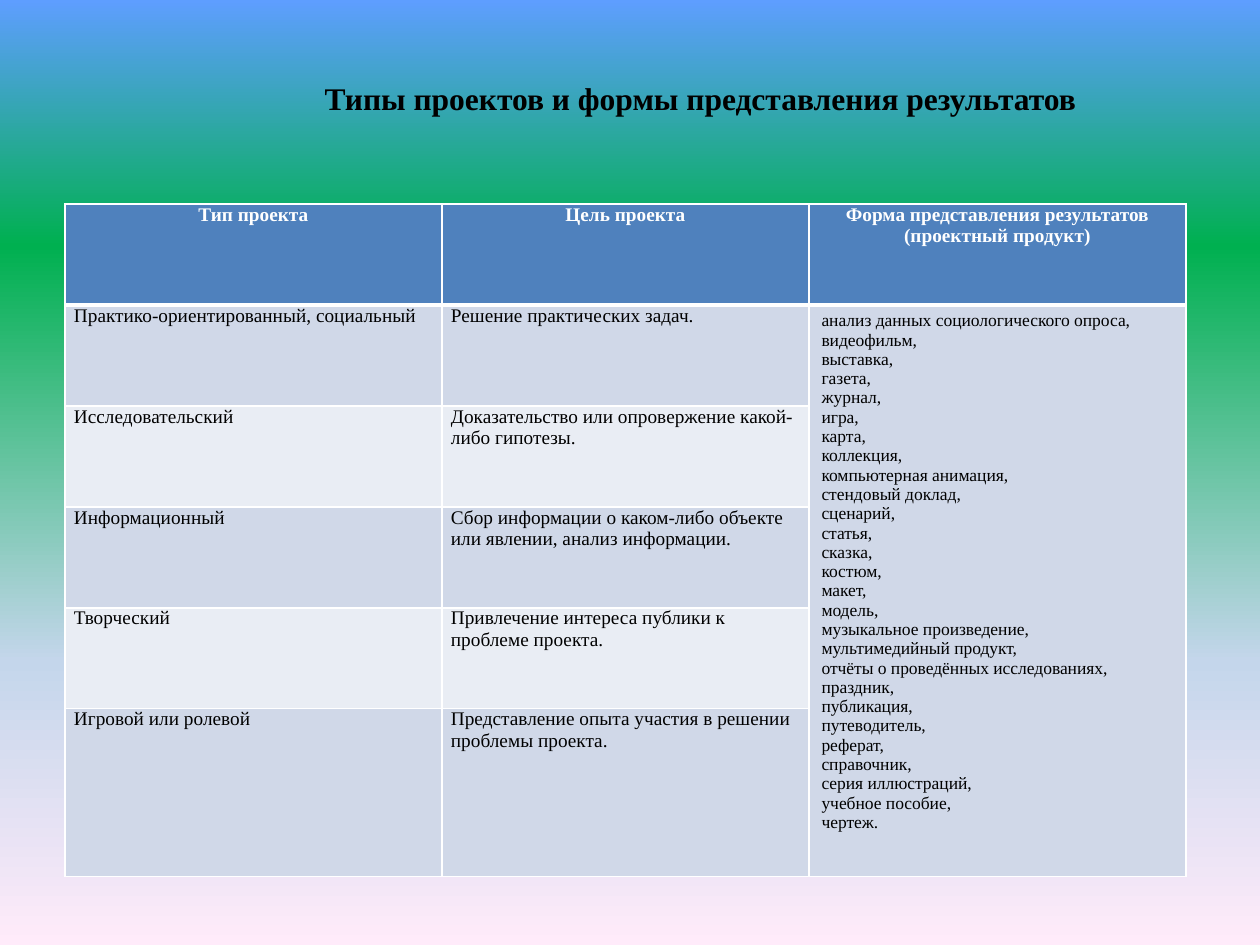
"""Build a slide with a table of project types, goals and result formats."""
from lxml import etree
from pptx import Presentation
from pptx import util as u
from pptx.dml.color import RGBColor
from pptx.enum import text
from pptx.oxml.ns import qn

PX = 914400 // 126
FONT = "Times New Roman"
COLORS = {"black": "000000", "white": "FFFFFF", "header": "4F81BD",
          "odd": "D0D8E8", "even": "E9EDF4"}
BACKGROUND = [(0, "5E9EFF"), (26, "00B050"), (70, "C4D6EB"), (100, "FFEBFA")]
HEADINGS = ["Тип проекта", "Цель проекта",
            "Форма представления результатов (проектный продукт)"]
PROJECTS = [
    ("Практико-ориентированный, социальный", "Решение практических задач."),
    ("Исследовательский", "Доказательство или опровержение какой-либо гипотезы."),
    ("Информационный",
     "Сбор информации о каком-либо объекте или явлении, анализ информации."),
    ("Творческий", "Привлечение интереса публики к проблеме проекта."),
    ("Игровой или ролевой", "Представление опыта участия в решении проблемы проекта."),
]
PRODUCTS = [
    "анализ данных социологического опроса,", "видеофильм,", "выставка,", "газета,",
    "журнал,", "игра,", "карта,", "коллекция,", "компьютерная анимация,",
    "стендовый доклад,", "сценарий,", "статья,", "сказка,", "костюм,", "макет,",
    "модель,", "музыкальное произведение,", "мультимедийный продукт,",
    "отчёты о проведённых исследованиях,", "праздник,", "публикация,",
    "путеводитель,", "реферат,", "справочник,", "серия иллюстраций,",
    "учебное пособие,", "чертеж.",
]
COLUMNS = [377, 367, 377]
ROWS = [101] * 5 + [168]


def style_text(frame, size, color, bold, align):
    for para in frame.paragraphs:
        para.alignment = align
        for span in para.runs:
            span.font.name = FONT
            span.font.size = u.Pt(size)
            span.font.bold = bold
            span.font.color.rgb = RGBColor.from_string(COLORS[color])


def add_border(cell, index, side, points):
    line = etree.Element(qn(f"a:{side}"), w=str(u.Pt(points)))
    fill = etree.SubElement(line, qn("a:solidFill"))
    etree.SubElement(fill, qn("a:srgbClr"), val=COLORS["white"])
    cell._tc.get_or_add_tcPr().insert(index, line)


deck = Presentation()
deck.slide_width, deck.slide_height = u.Inches(10), u.Inches(7.5)
page = deck.slides.add_slide(deck.slide_layouts[5])

backdrop = page.background.fill
backdrop.gradient()
backdrop.gradient_angle = 270
stops = page.background._cSld.find(".//" + qn("a:gsLst"))
for stop in list(stops):
    stops.remove(stop)
for percent, color in BACKGROUND:
    stop = etree.SubElement(stops, qn("a:gs"), pos=str(percent * 1000))
    etree.SubElement(stop, qn("a:srgbClr"), val=color)

title = page.shapes.title
title.left, title.top, title.width, title.height = (n * PX for n in (95, 37, 1071, 80))
frame = title.text_frame
frame.text = "Типы проектов и формы представления результатов"
frame.auto_size = text.MSO_AUTO_SIZE.NONE
frame.vertical_anchor = text.MSO_ANCHOR.TOP
frame.margin_left, frame.margin_right = 140 * PX, 0
frame.margin_top, frame.margin_bottom = 42 * PX, 0
style_text(frame, 18, "black", True, text.PP_ALIGN.CENTER)

holder = page.shapes.add_table(len(ROWS), len(COLUMNS), 65 * PX, 204 * PX,
                               sum(COLUMNS) * PX, sum(ROWS) * PX)
table = holder.table
for column, width in zip(table.columns, COLUMNS):
    column.width = width * PX
for row, height in zip(table.rows, ROWS):
    row.height = height * PX

table.cell(1, 2).merge(table.cell(5, 2))
contents = [HEADINGS] + [(kind, goal, "") for kind, goal in PROJECTS]
for r, values in enumerate(contents):
    for c, value in enumerate(values):
        cell = table.cell(r, c)
        shade = "header" if r == 0 else "odd" if r % 2 or c == 2 else "even"
        cell.fill.solid()
        cell.fill.fore_color.rgb = RGBColor.from_string(COLORS[shade])
        for index, side in enumerate(("lnL", "lnR", "lnT", "lnB")):
            thick = (r, side) in ((0, "lnB"), (1, "lnT"))
            add_border(cell, index, side, 3 if thick else 1)
        if value:
            cell.text_frame.text = value
            cell.margin_left = cell.margin_right = 9 * PX
            cell.margin_top = cell.margin_bottom = 0
            style_text(cell.text_frame, 11, "white" if r == 0 else "black", r == 0,
                       text.PP_ALIGN.CENTER if r == 0 else text.PP_ALIGN.LEFT)

products = table.cell(1, 2).text_frame
products.text = "\n".join(PRODUCTS)
style_text(products, 10, "black", False, text.PP_ALIGN.LEFT)

deck.save("out.pptx")
